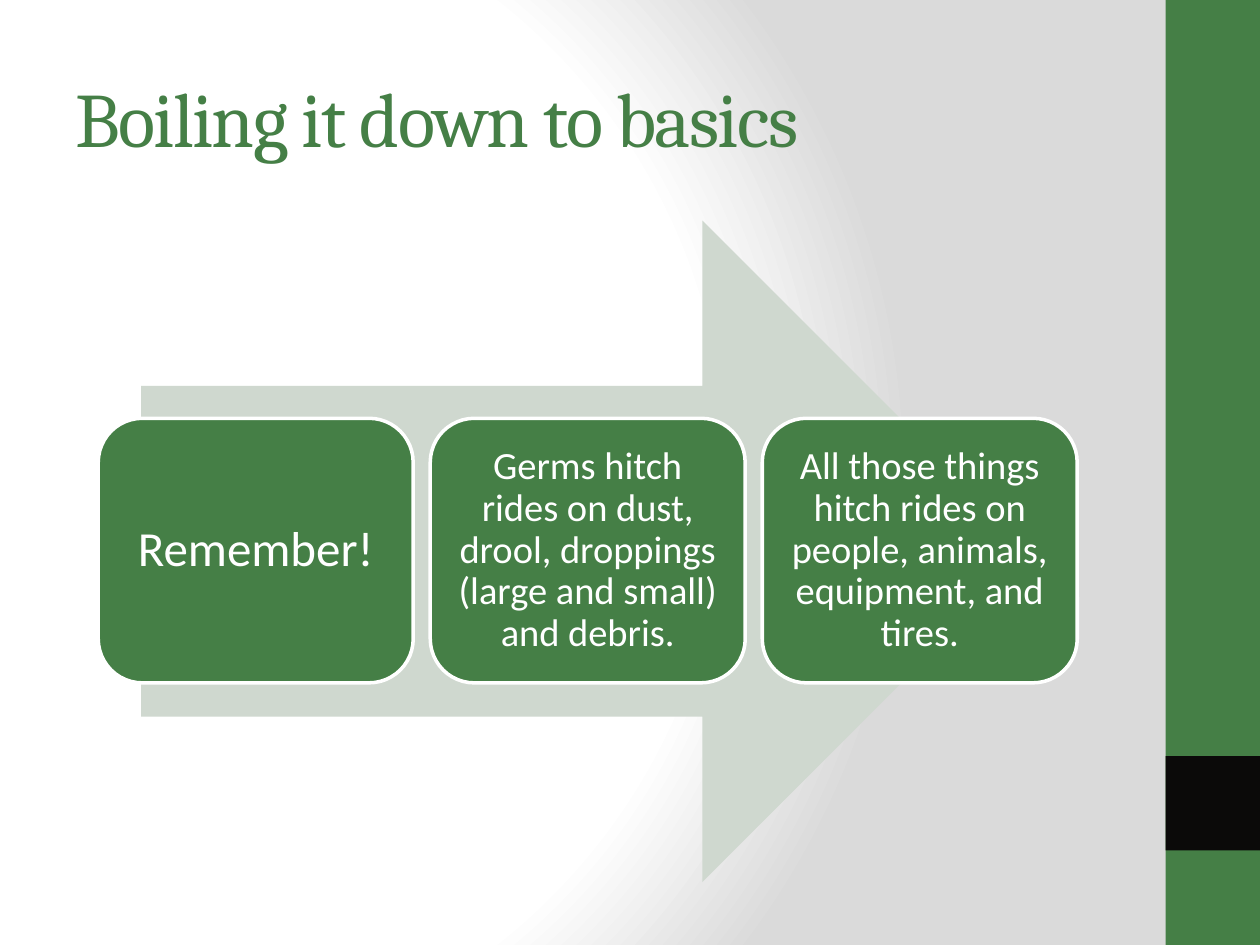
from dataclasses import dataclass

from lxml import etree
from pptx import Presentation
from pptx.dml.color import RGBColor
from pptx.enum.shapes import MSO_SHAPE
from pptx.enum.text import MSO_ANCHOR, PP_ALIGN
from pptx.oxml.ns import qn
from pptx.shapes.autoshape import Shape
from pptx.slide import Slide
from pptx.util import Inches, Pt

RECT = MSO_SHAPE.RECTANGLE
ROUNDED = MSO_SHAPE.ROUNDED_RECTANGLE
ARROW = MSO_SHAPE.RIGHT_ARROW
MIDDLE = MSO_ANCHOR.MIDDLE
LEFT, CENTER = PP_ALIGN.LEFT, PP_ALIGN.CENTER

GREEN = RGBColor(0x45, 0x7F, 0x46)
PALE_GREEN = RGBColor(0xCF, 0xD8, 0xCF)
BLACK = RGBColor(0x0B, 0x0A, 0x09)
WHITE = RGBColor(0xFF, 0xFF, 0xFF)
GREY = RGBColor(0xDA, 0xDA, 0xDA)

BACKGROUND_STOPS = ((0, WHITE), (75, WHITE), (100, GREY))
BACKGROUND_FOCUS = {"l": 20, "t": 50, "r": 100, "b": 50}

CARD_LEFT, CARD_TOP = 0.78, 3.32
CARD_WIDTH, CARD_HEIGHT = 2.5, 2.1
CARD_STEP = 2.635


@dataclass
class Box:
    left: float
    top: float
    width: float
    height: float

    def lengths(self) -> tuple:
        return tuple(Inches(v) for v in (self.left, self.top, self.width, self.height))


@dataclass
class Card:
    text: str
    size: int
    inset: float


CARDS = (
    Card("Remember!", 28, 0.12),
    Card("Germs hitch rides on dust, drool, droppings (large and small) and debris.", 22, 0.09),
    Card("All those things hitch rides on people, animals, equipment, and tires.", 22, 0.09),
)


def paint_background(slide: Slide) -> None:
    """Fill the background with a circular gradient."""
    fill = slide.background.fill
    fill.solid()
    properties = slide.background._cSld.bg.bgPr
    properties.remove(properties.find(qn("a:solidFill")))
    gradient = etree.Element(qn("a:gradFill"), rotWithShape="1")
    stops = etree.SubElement(gradient, qn("a:gsLst"))
    for percent, color in BACKGROUND_STOPS:
        stop = etree.SubElement(stops, qn("a:gs"), pos=str(percent * 1000))
        etree.SubElement(stop, qn("a:srgbClr"), val=str(color))
    circle = etree.SubElement(gradient, qn("a:path"), path="circle")
    focus = {side: str(percent * 1000) for side, percent in BACKGROUND_FOCUS.items()}
    etree.SubElement(circle, qn("a:fillToRect"), focus)
    properties.insert(0, gradient)


def add_block(slide: Slide, kind: int, box: Box, color: RGBColor) -> Shape:
    block = slide.shapes.add_shape(kind, *box.lengths())
    block.shadow.inherit = False
    block.fill.solid()
    block.fill.fore_color.rgb = color
    block.line.fill.background()
    return block


def write_text(shape: Shape, text: str, font: dict, color: RGBColor,
               align: int, inset: float) -> None:
    frame = shape.text_frame
    margins = {f"margin_{side}": Inches(inset) for side in ("left", "top", "right", "bottom")}
    for name, value in {"word_wrap": True, "vertical_anchor": MIDDLE, **margins}.items():
        setattr(frame, name, value)
    paragraph = frame.paragraphs[0]
    paragraph.alignment = align
    run = paragraph.add_run()
    run.text = text
    for name, value in font.items():
        setattr(run.font, name, value)
    run.font.color.rgb = color


def add_title(slide: Slide, text: str) -> None:
    title = slide.shapes.add_textbox(*Box(0.5, 0.3, 8.33, 1.25).lengths())
    write_text(title, text, {"name": "Cambria", "size": Pt(44)}, GREEN, LEFT, 0.1)
    # Tighten the letters by one point
    title.text_frame.paragraphs[0].runs[0].font._element.set("spc", "-100")


def add_card(slide: Slide, index: int, card: Card) -> None:
    box = Box(CARD_LEFT + index * CARD_STEP, CARD_TOP, CARD_WIDTH, CARD_HEIGHT)
    block = add_block(slide, ROUNDED, box, GREEN)
    block.line.color.rgb = WHITE
    block.line.width = Pt(2)
    write_text(block, card.text, {"name": "Calibri", "size": Pt(card.size)},
               WHITE, CENTER, card.inset)
    block.text_frame.paragraphs[0].line_spacing = 0.9


def main() -> None:
    deck = Presentation()
    deck.slide_width, deck.slide_height = Inches(10), Inches(7.5)
    slide = deck.slides.add_slide(deck.slide_layouts[6])

    # Background and side band
    paint_background(slide)
    add_block(slide, RECT, Box(9.25, 0, 0.75, 7.5), GREEN)
    add_block(slide, RECT, Box(9.25, 6, 0.75, 0.75), BLACK)

    add_title(slide, "Boiling it down to basics")

    # Process arrow with its three cards
    add_block(slide, ARROW, Box(1.12, 1.75, 7.08, 5.25), PALE_GREEN)
    for index, card in enumerate(CARDS):
        add_card(slide, index, card)

    deck.save("out.pptx")


if __name__ == "__main__":
    main()
